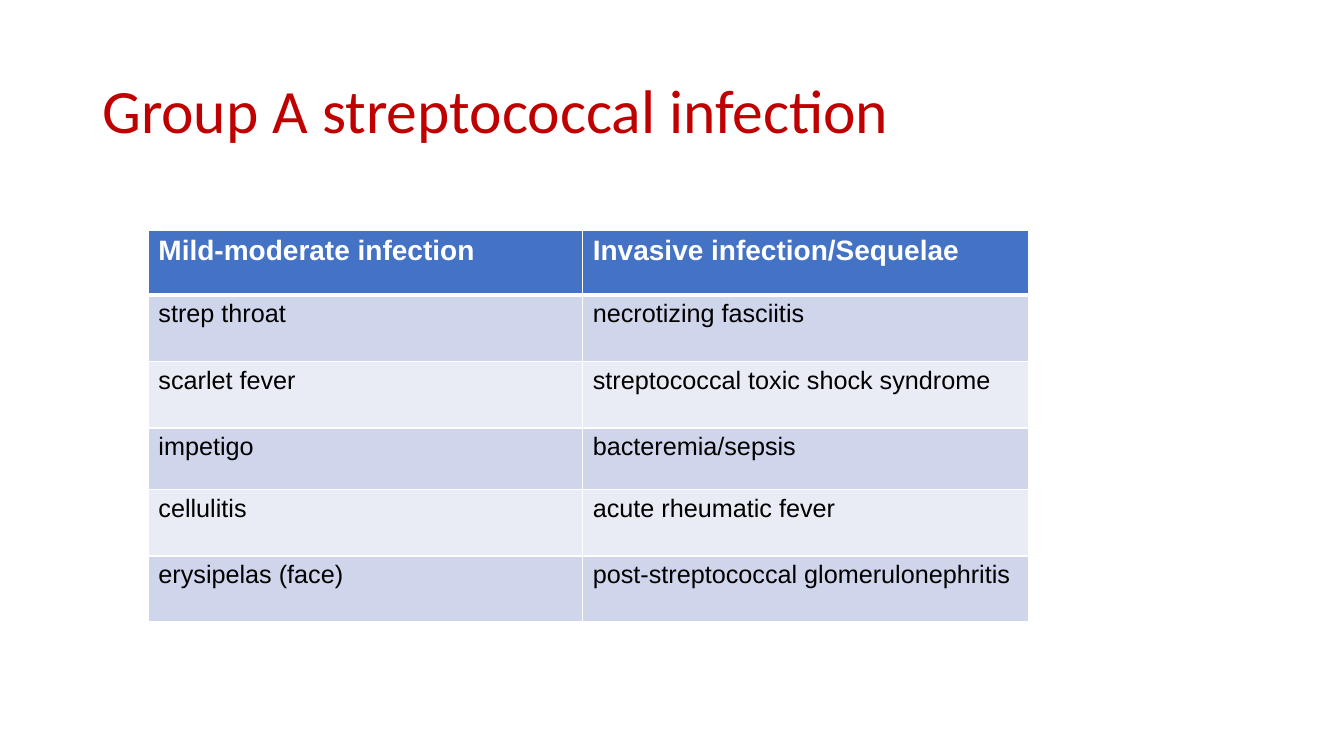
from dataclasses import dataclass

from lxml import etree
from pptx import Presentation
from pptx.dml.color import RGBColor
from pptx.enum.text import MSO_ANCHOR
from pptx.oxml.ns import qn
from pptx.util import Pt

MIDDLE = MSO_ANCHOR.MIDDLE
BLANK_LAYOUT = 6


@dataclass(frozen=True)
class Theme:
    title_font: str = "Calibri"
    table_font: str = "Arial"
    title_size: int = 44
    header_size: int = 20
    body_size: int = 18
    title: str = "C00000"
    header_text: str = "FFFFFF"
    body_text: str = "000000"
    border: str = "FFFFFF"
    header_fill: str = "4472C4"
    bands: tuple = ("CFD5EA", "E9EBF5")


THEME = Theme()

COLUMN_WIDTHS = (310.3, 318.2)
ROW_HEIGHTS = (46, 47.6, 47.6, 43.9, 47.6, 47)
INFECTIONS = (
    ("Mild-moderate infection", "Invasive infection/Sequelae"),
    ("strep throat", "necrotizing fasciitis"),
    ("scarlet fever", "streptococcal toxic shock syndrome"),
    ("impetigo", "bacteremia/sepsis"),
    ("cellulitis", "acute rheumatic fever"),
    ("erysipelas (face)", "post-streptococcal glomerulonephritis"),
)


def write_text(tf, text, color, **font_format):
    """Put one formatted run in the first paragraph and return the paragraph."""
    p = tf.paragraphs[0]
    r = p.add_run()
    r.text = text
    for name, value in font_format.items():
        setattr(r.font, name, value)
    r.font.color.rgb = RGBColor.from_string(color)
    return p


def add_title(slide, text, left, top, width, height):
    tf = slide.shapes.add_textbox(Pt(left), Pt(top), Pt(width), Pt(height)).text_frame
    tf.word_wrap = True
    tf.vertical_anchor = MIDDLE
    p = write_text(tf, text, THEME.title, name=THEME.title_font,
                   size=Pt(THEME.title_size), bold=False)
    p.line_spacing = 0.9


def set_borders(cell, widths):
    """Draw the cell edges; widths maps each edge tag to points."""
    tc_pr = cell._tc.get_or_add_tcPr()
    for edge, width in widths.items():
        ln = etree.SubElement(tc_pr, qn(f"a:{edge}"), w=str(Pt(width)))
        fill = etree.SubElement(ln, qn("a:solidFill"))
        etree.SubElement(fill, qn("a:srgbClr"), val=THEME.border)


def format_cell(cell, text, row):
    header = row == 0
    # Thick rule between the header and the body
    set_borders(cell, {"lnL": 1, "lnR": 1,
                       "lnT": 3 if row == 1 else 1,
                       "lnB": 3 if header else 1})
    fill = THEME.header_fill if header else THEME.bands[(row - 1) % 2]
    cell.fill.solid()
    cell.fill.fore_color.rgb = RGBColor.from_string(fill)
    write_text(cell.text_frame, text,
               THEME.header_text if header else THEME.body_text,
               name=THEME.table_font, bold=header,
               size=Pt(THEME.header_size if header else THEME.body_size))


def add_infection_table(slide, rows, left, top):
    table = slide.shapes.add_table(
        len(rows), len(COLUMN_WIDTHS), Pt(left), Pt(top),
        Pt(sum(COLUMN_WIDTHS)), Pt(sum(ROW_HEIGHTS))).table
    for column, width in zip(table.columns, COLUMN_WIDTHS):
        column.width = Pt(width)
    for i, (texts, height) in enumerate(zip(rows, ROW_HEIGHTS)):
        table.rows[i].height = Pt(height)
        for j, text in enumerate(texts):
            format_cell(table.cell(i, j), text, i)


def main():
    prs = Presentation()
    prs.slide_width, prs.slide_height = Pt(960), Pt(540)
    slide = prs.slides.add_slide(prs.slide_layouts[BLANK_LAYOUT])

    # Heading
    add_title(slide, "Group A streptococcal infection", 66, 28.8, 828, 104.4)

    # Mild and invasive forms side by side
    add_infection_table(slide, INFECTIONS, 106, 164.5)

    prs.save("out.pptx")


if __name__ == "__main__":
    main()
